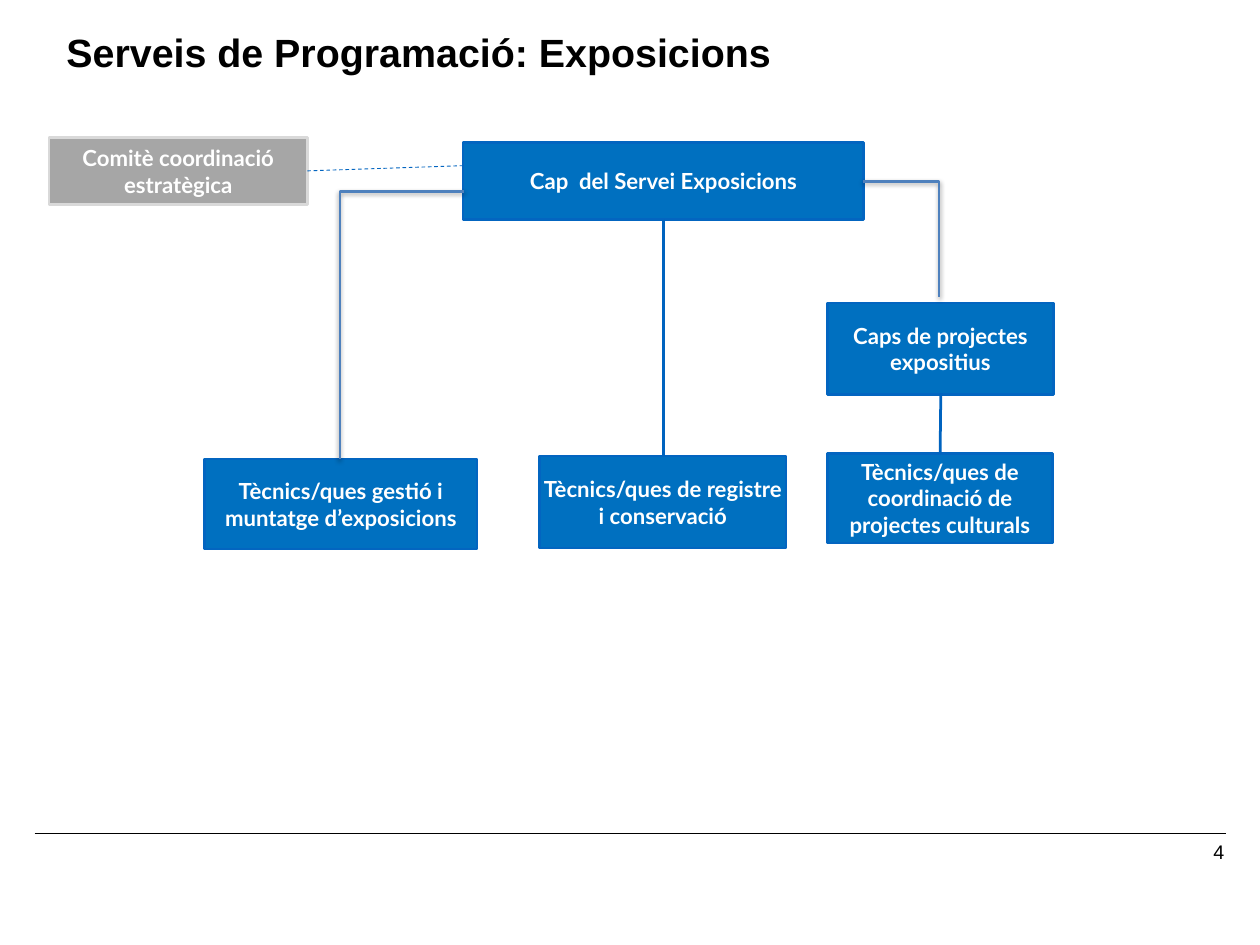
from lxml import etree
from pptx import Presentation
from pptx.dml.color import RGBColor
from pptx.enum.dml import MSO_LINE
from pptx.enum.shapes import MSO_CONNECTOR, MSO_SHAPE
from pptx.enum.text import MSO_ANCHOR, MSO_AUTO_SIZE, PP_ALIGN
from pptx.oxml.ns import qn
from pptx.util import Cm, Pt

RECT = MSO_SHAPE.RECTANGLE
STRAIGHT, ELBOW = MSO_CONNECTOR.STRAIGHT, MSO_CONNECTOR.ELBOW
DASH = MSO_LINE.DASH
TOP, MIDDLE = MSO_ANCHOR.TOP, MSO_ANCHOR.MIDDLE
LEFT, CENTER, RIGHT = PP_ALIGN.LEFT, PP_ALIGN.CENTER, PP_ALIGN.RIGHT
FIXED = MSO_AUTO_SIZE.NONE


def color(code):
    return RGBColor.from_string(code)


class Chart:
    """Style and current slide of the organisation chart."""
    head, label = "Arial", "Lato"
    blue, edge, link, bend = "0070C0", "0365C0", "0063BF", "4F81BD"
    gray, rim, black, white = "A6A6A6", "D9D9D9", "000000", "FFFFFF"

    def __init__(self, slide):
        self.slide = slide

    def label_frame(self, frame, text, font, size, ink, bold, align, anchor):
        frame.word_wrap = True
        frame.auto_size = FIXED
        frame.vertical_anchor = anchor
        para = frame.paragraphs[0]
        para.text = text
        para.alignment = align
        style = para.font
        style.name, style.size, style.bold = font, Pt(size), bold
        style.color.rgb = color(ink)

    def title(self, text, x, y, w, h):
        shape = self.slide.shapes.title
        shape.left, shape.top, shape.width, shape.height = map(Cm, (x, y, w, h))
        self.label_frame(shape.text_frame, text, self.head, 32, self.black,
                         True, LEFT, TOP)

    def number(self, text, x, y, w, h):
        shape = self.slide.shapes.add_textbox(*map(Cm, (x, y, w, h)))
        self.label_frame(shape.text_frame, text, self.head, 16, self.black,
                         False, RIGHT, TOP)

    def box(self, text, x, y, w, h, fill=blue, line=edge, inset=0.1):
        shape = self.slide.shapes.add_shape(RECT, *map(Cm, (x, y, w, h)))
        shape.shadow.inherit = False
        shape.fill.solid()
        shape.fill.fore_color.rgb = color(fill)
        shape.line.color.rgb = color(line)
        shape.line.width = Pt(2)
        frame = shape.text_frame
        frame.margin_left = frame.margin_right = Cm(inset)
        frame.margin_top = frame.margin_bottom = Cm(0.1)
        self.label_frame(frame, text, self.label, 18, self.white,
                         True, CENTER, MIDDLE)

    def line(self, x1, y1, x2, y2, ink, width, dash=None, kind=STRAIGHT):
        """Draw a line; return its properties and its empty effect list."""
        wire = self.slide.shapes.add_connector(kind, *map(Cm, (x1, y1, x2, y2)))
        wire.line.color.rgb = color(ink)
        wire.line.width = Pt(width)
        if dash:
            wire.line.dash_style = dash
        props = wire._element.spPr
        return props, etree.SubElement(props, qn("a:effectLst"))

    def elbow(self, x1, y1, x2, y2):
        """Draw a shadowed line that runs sideways, then turns down once."""
        props, effects = self.line(x1, y1, x2, y2, self.bend, 2, kind=ELBOW)
        props.find(qn("a:prstGeom")).set("prst", "bentConnector2")
        shade = etree.SubElement(
            effects, qn("a:outerShdw"), blurRad=str(Pt(4)), dist=str(Pt(2)),
            dir="5400000", rotWithShape="0")
        tint = etree.SubElement(shade, qn("a:srgbClr"), val=self.black)
        etree.SubElement(tint, qn("a:alpha"), val="38000")


def main():
    deck = Presentation()
    deck.slide_width, deck.slide_height = Cm(36.12), Cm(27.1)
    chart = Chart(deck.slides.add_slide(deck.slide_layouts[5]))

    chart.title("Serveis de Programació: Exposicions", 1.65, 0.69, 23.09, 2.57)
    chart.line(0.99, 23.9, 35.15, 23.9, chart.black, 1)
    chart.number("4", 26.92, 23.95, 8.43, 1.04)

    chart.box("Caps de projectes expositius", 23.72, 8.69, 6.48, 2.62, inset=0.25)
    chart.box("Tècnics/ques de coordinació de projectes culturals",
              23.72, 13, 6.45, 2.57)
    chart.box("Cap  del Servei Exposicions", 13.28, 4.09, 11.48, 2.21)
    chart.box("Comitè coordinació estratègica", 1.4, 3.94, 7.42, 1.93,
              chart.gray, chart.rim)
    chart.box("Tècnics/ques de registre i conservació", 15.47, 13.08, 7.06, 2.64)
    chart.box("Tècnics/ques gestió i muntatge d’exposicions",
              5.87, 13.16, 7.8, 2.59)

    chart.line(8.81, 4.9, 13.31, 4.75, chart.edge, 0.75, DASH)
    chart.line(19.02, 6.3, 19.02, 13.08, chart.link, 2)
    chart.line(26.95, 13, 26.97, 11.28, chart.link, 2.25)
    chart.elbow(13.31, 5.49, 9.75, 13.16)
    chart.elbow(24.74, 5.21, 26.92, 8.51)

    deck.save("out.pptx")


if __name__ == "__main__":
    main()
